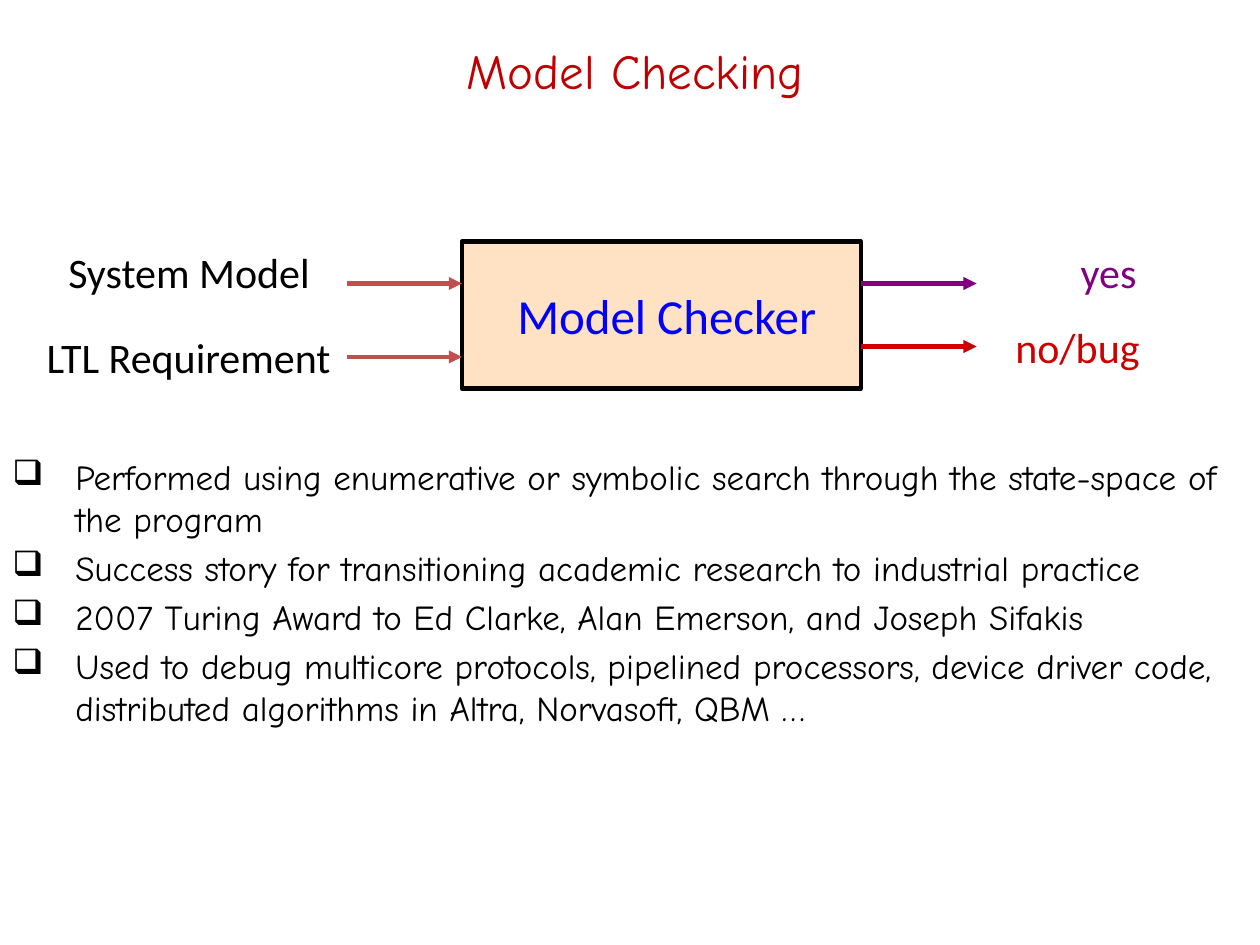
"""Build the Model Checking slide."""
from typing import NamedTuple

from lxml.etree import SubElement
from pptx import Presentation
from pptx.dml.color import RGBColor
from pptx.enum.shapes import MSO_CONNECTOR as Connector, MSO_SHAPE as Preset
from pptx.enum.text import MSO_ANCHOR as Anchor, MSO_AUTO_SIZE as AutoSize, PP_ALIGN as Align
from pptx.oxml.ns import qn
from pptx.util import Pt

COLORS = {
    "title": "C00000",
    "black": "000000",
    "box": "FFCC99",
    "input": "C0504D",
    "yes": "800080",
    "bug": "CC0000",
    "checker": "0000FF",
}
HEADING_FONT, LABEL_FONT = "Comic Neue", "Calibri"
LINE_WIDTH = 2.5
ARROW_LENGTH = 66
INPUT_LEFT, OUTPUT_LEFT = 198, 492
LABEL_HEIGHT = 36


class Box(NamedTuple):
    left: float
    top: float
    width: float
    height: float


class Arrow(NamedTuple):
    left: float
    y: float
    color: str


class Label(NamedTuple):
    text: str
    box: Box
    color: str


CHECKER_BOX = Box(264, 138, 228, 84)
ARROWS = (
    Arrow(INPUT_LEFT, 162, "input"),
    Arrow(INPUT_LEFT, 204, "input"),
    Arrow(OUTPUT_LEFT, 162, "yes"),
    Arrow(OUTPUT_LEFT, 198, "bug"),
)
LABELS = (
    Label("System Model", Box(31, 137.5, 154, LABEL_HEIGHT), "black"),
    Label("LTL Requirement", Box(18.5, 186, 178.5, LABEL_HEIGHT), "black"),
    Label("yes", Box(610, 137.5, 47, LABEL_HEIGHT), "yes"),
    Label("no/bug", Box(570, 180, 91.5, LABEL_HEIGHT), "bug"),
)
POINTS = (
    "Performed using enumerative or symbolic search through the state-space of the program",
    "Success story for transitioning academic research to industrial practice",
    "2007 Turing Award to Ed Clarke, Alan Emerson, and Joseph Sifakis",
    "Used to debug multicore protocols, pipelined processors, device driver code, "
    "distributed algorithms in Altra, Norvasoft, QBM …",
)


def color_of(name: str) -> RGBColor:
    """Return the named colour."""
    return RGBColor.from_string(COLORS[name])


def add_bullet(paragraph, indent: float) -> None:
    """Give a paragraph a hanging square bullet."""
    properties = paragraph._p.get_or_add_pPr()
    properties.set("marL", str(Pt(indent)))
    properties.set("indent", str(-Pt(indent)))
    SubElement(properties, qn("a:buChar")).set("char", "❑")


def add_text(slide, box: Box, *texts: str, size: float, color: str, font: str = LABEL_FONT,
             align=Align.CENTER, anchor=Anchor.MIDDLE, wrap: bool = True,
             top_inset: float = 3.6, space_after: float = 0, bullet_indent: float = 0) -> None:
    """Add a text box with one paragraph per text."""
    frame = slide.shapes.add_textbox(*map(Pt, box)).text_frame
    frame.word_wrap = wrap
    frame.auto_size = AutoSize.NONE if wrap else AutoSize.SHAPE_TO_FIT_TEXT
    frame.vertical_anchor = anchor
    frame.margin_top = Pt(top_inset)
    for index, text in enumerate(texts):
        paragraph = frame.add_paragraph() if index else frame.paragraphs[0]
        paragraph.alignment = align
        paragraph.space_after = Pt(space_after)
        if bullet_indent:
            add_bullet(paragraph, bullet_indent)
        run = paragraph.add_run()
        run.text = text
        run.font.name = font
        run.font.size = Pt(size)
        run.font.color.rgb = color_of(color)


def add_checker_box(slide) -> None:
    """Add the translucent rectangle of the model checker."""
    shape = slide.shapes.add_shape(Preset.RECTANGLE, *map(Pt, CHECKER_BOX))
    shape.shadow.inherit = False
    shape.fill.solid()
    shape.fill.fore_color.rgb = color_of("box")
    fill_color = shape._element.spPr.find(qn("a:solidFill")).find(qn("a:srgbClr"))
    SubElement(fill_color, qn("a:alpha")).set("val", "58000")
    shape.line.color.rgb = color_of("black")
    shape.line.width = Pt(LINE_WIDTH)


def add_arrow(slide, arrow: Arrow) -> None:
    """Add a horizontal arrow pointing right."""
    connector = slide.shapes.add_connector(
        Connector.STRAIGHT, Pt(arrow.left), Pt(arrow.y),
        Pt(arrow.left + ARROW_LENGTH), Pt(arrow.y))
    connector.line.color.rgb = color_of(arrow.color)
    connector.line.width = Pt(LINE_WIDTH)
    SubElement(connector.line._get_or_add_ln(), qn("a:tailEnd")).set("type", "triangle")
    SubElement(connector._element.spPr, qn("a:effectLst"))


def main() -> None:
    """Build and save the presentation."""
    presentation = Presentation()
    presentation.slide_width, presentation.slide_height = Pt(720), Pt(540)
    slide = presentation.slides.add_slide(presentation.slide_layouts[6])
    add_text(slide, Box(54, 12, 618, 56), "Model Checking",
             size=28, color="title", font=HEADING_FONT)
    add_checker_box(slide)
    for arrow in ARROWS:
        add_arrow(slide, arrow)
    for label in LABELS:
        add_text(slide, label.box, label.text, size=24, color=label.color, wrap=False)
    add_text(slide, Box(252, 138, 258, 84), "Model Checker", size=28, color="checker")
    add_text(slide, Box(0, 228, 720, 288), *POINTS, size=20, color="black",
             font=HEADING_FONT, align=Align.LEFT, anchor=Anchor.TOP,
             top_inset=32.5, space_after=4, bullet_indent=36)
    presentation.save("out.pptx")


if __name__ == "__main__":
    main()
